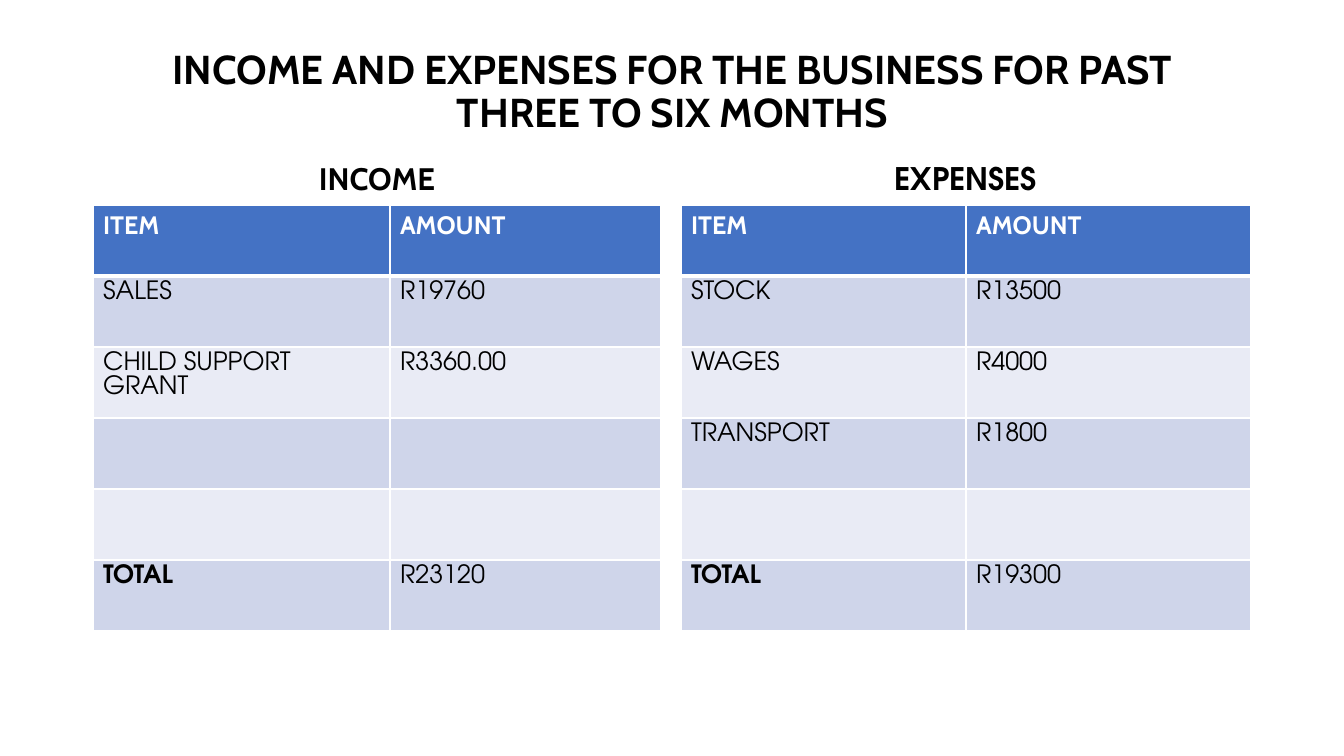
from dataclasses import dataclass

from lxml import etree
from pptx import Presentation
from pptx.dml.color import RGBColor
from pptx.enum.text import MSO_ANCHOR, PP_ALIGN
from pptx.oxml.ns import qn
from pptx.util import Emu, Pt

CENTER, LEFT = PP_ALIGN.CENTER, PP_ALIGN.LEFT
TOP, MIDDLE, BOTTOM = MSO_ANCHOR.TOP, MSO_ANCHOR.MIDDLE, MSO_ANCHOR.BOTTOM

COLORS = {
    "text": "000000",
    "white": "FFFFFF",
    "header": "4472C4",
    "band_dark": "CFD5EA",
    "band_light": "E9EBF5",
}
CABIN, ADVENTOR = "Cabin", "TeX Gyre Adventor"
PX = 914400 / 100.8
HEADING_TOP, HEADING_H = 146, 55
TABLE_TOP, ROW_H = 205, 71


@dataclass
class Ledger:
    heading: str
    heading_font: str
    left: int
    col_widths: tuple[int, int]
    rows: list[tuple[str, str]]


LEDGERS = [
    Ledger("INCOME", CABIN, 93, (297, 271), [
        ("ITEM", "AMOUNT"),
        ("SALES", "R19760"),
        ("CHILD SUPPORT GRANT", "R3360.00"),
        ("", ""),
        ("", ""),
        ("TOTAL", "R23120"),
    ]),
    Ledger("EXPENSES", ADVENTOR, 681, (285, 285), [
        ("ITEM", "AMOUNT"),
        ("STOCK", "R13500"),
        ("WAGES", "R4000"),
        ("TRANSPORT", "R1800"),
        ("", ""),
        ("TOTAL", "R19300"),
    ]),
]


def px(n: int) -> Emu:
    return Emu(round(n * PX))


def write(tf, text: str, *, size: float, font: str = CABIN, color: str = "text",
          bold: bool = True, align=LEFT, anchor=TOP, spacing: float = 1.0) -> None:
    tf.word_wrap = True
    tf.vertical_anchor = anchor
    tf.text = text
    p = tf.paragraphs[0]
    p.alignment = align
    p.line_spacing = spacing
    p.space_before = Pt(0)
    for r in p.runs:
        r.font.size = Pt(size)
        r.font.name = font
        r.font.bold = bold
        r.font.color.rgb = RGBColor.from_string(COLORS[color])


def add_borders(cell, top: int, bottom: int) -> None:
    tc_pr = cell._tc.get_or_add_tcPr()
    for side, width in (("L", 1), ("R", 1), ("T", top), ("B", bottom)):
        ln = etree.SubElement(tc_pr, qn(f"a:ln{side}"), w=str(Pt(width)))
        fill = etree.SubElement(ln, qn("a:solidFill"))
        etree.SubElement(fill, qn("a:srgbClr"), val=COLORS["white"])


def add_ledger(slide, ledger: Ledger) -> None:
    # Heading above the table
    width = sum(ledger.col_widths)
    sp = slide.shapes.add_textbox(px(ledger.left), px(HEADING_TOP), px(width), px(HEADING_H))
    write(sp.text_frame, ledger.heading, size=22.2, font=ledger.heading_font,
          align=CENTER, anchor=BOTTOM, spacing=0.8)

    # Table with header and banded rows
    n_rows = len(ledger.rows)
    table = slide.shapes.add_table(n_rows, 2, px(ledger.left), px(TABLE_TOP),
                                   px(width), px(ROW_H * n_rows)).table
    for col, col_w in zip(table.columns, ledger.col_widths):
        col.width = px(col_w)
    for i, values in enumerate(ledger.rows):
        table.rows[i].height = px(ROW_H)
        header = i == 0
        fill = "header" if header else "band_dark" if i % 2 else "band_light"
        for j, value in enumerate(values):
            cell = table.cell(i, j)
            add_borders(cell, top=3 if i == 1 else 1, bottom=3 if header else 1)
            cell.fill.solid()
            cell.fill.fore_color.rgb = RGBColor.from_string(COLORS[fill])
            if value:
                write(cell.text_frame, value, size=18,
                      font=CABIN if header else ADVENTOR,
                      color="white" if header else "text",
                      bold=header or value == "TOTAL")
                cell.vertical_anchor = TOP


def main() -> None:
    prs = Presentation()
    prs.slide_width, prs.slide_height = px(1344), px(756)
    slide = prs.slides.add_slide(prs.slide_layouts[5])

    # Title
    title = slide.shapes.title
    title.left, title.top, title.width, title.height = px(93), px(40), px(1159), px(106)
    write(title.text_frame,
          "INCOME AND EXPENSES FOR THE BUSINESS FOR PAST\vTHREE TO SIX MONTHS",
          size=28.8, align=CENTER, anchor=MIDDLE, spacing=0.9)

    # Income and expenses
    for ledger in LEDGERS:
        add_ledger(slide, ledger)

    prs.save("out.pptx")


if __name__ == "__main__":
    main()
